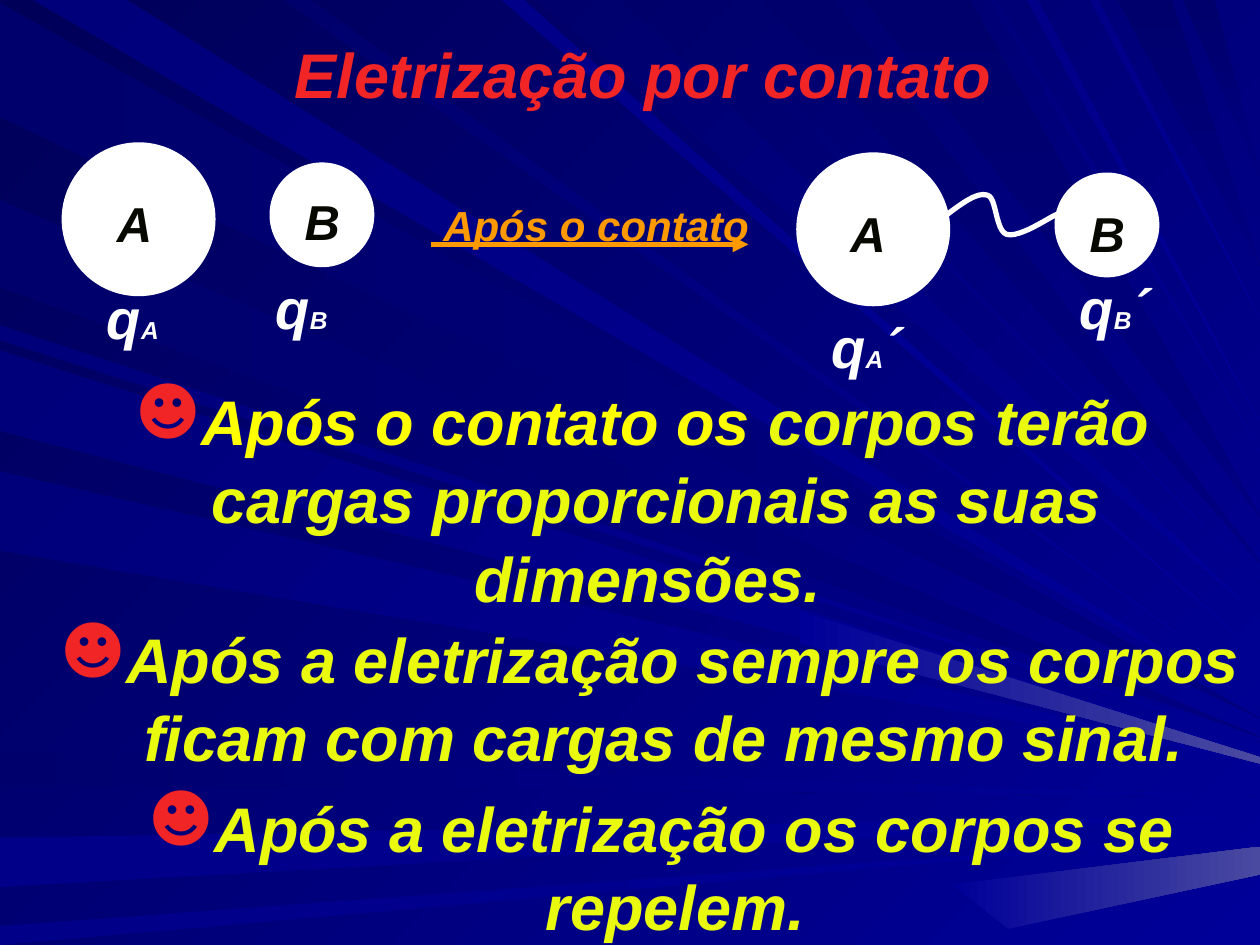
from pptx import Presentation
from pptx import util as u
from pptx.dml.color import RGBColor
from pptx.enum import shapes, text
from pptx.oxml import ns
from lxml import etree

COLOURS = {
    "red": "F12525", "lime": "E9FA0E", "yellow": "FFFF00", "orange": "FF9900",
    "white": "FFFFFF", "ink": "070800", "night": "000058", "deep": "00006D",
    "middle": "00007B", "navy": "000080", "soft": "000088", "royal": "000099",
    "haze": "4A4AA1",
}
RGB = {name: RGBColor.from_string(code) for name, code in COLOURS.items()}
STEP = 2.54  # centimetres per layout step
WIDTH, HEIGHT = 10, 7.5  # slide size in steps


def place(*values):
    return [u.Cm(value * STEP) for value in values]


def add_text(box, runs, size, colour, bullet=False):
    """Text box at box; runs are (words, size or None, colour or None)."""
    frame = slide.shapes.add_textbox(*place(*box)).text_frame
    frame.word_wrap = True
    frame.auto_size = text.MSO_AUTO_SIZE.SHAPE_TO_FIT_TEXT
    paragraph = frame.paragraphs[0]
    paragraph.line_spacing = 1.04
    if bullet:
        paragraph.alignment = text.PP_ALIGN.CENTER
        properties = paragraph._p.get_or_add_pPr()
        indent = u.Cm(0.56)
        properties.set("marL", str(indent))
        properties.set("indent", str(-indent))
        bullet_colour = etree.SubElement(properties, ns.qn("a:buClr"))
        etree.SubElement(bullet_colour, ns.qn("a:srgbClr"), val=COLOURS["red"])
        etree.SubElement(properties, ns.qn("a:buChar"), char="☻")
    for words, run_size, run_colour in runs:
        run = paragraph.add_run()
        run.text = words
        run.font.name = "Arial"
        run.font.size = u.Pt(run_size or size)
        run.font.bold = run.font.italic = True
        run.font.color.rgb = RGB[run_colour or colour]


presentation = Presentation()
presentation.slide_width, presentation.slide_height = place(WIDTH, HEIGHT)
slide = presentation.slides.add_slide(presentation.slide_layouts[6])

# Light rays: each starts between two marks on an edge and narrows to a
# height on the right edge
left_rays = [
    ("deep", "navy", 0, .02, .93, 5.7), ("deep", "royal", 0, 5.96, 6.23, 6.32),
    ("soft", "royal", 0, 6.65, 7.04, 6.47), ("soft", "royal", 0, 7.35, 7.5, 6.62),
    ("middle", "royal", 45, 2.58, 2.7, 5.89), ("deep", "navy", 0, 1.59, 2.28, 5.85),
    ("middle", "royal", 45, 2.78, 3.42, 6), ("middle", "royal", 45, 3.74, 4.37, 6.05),
]
top_rays = [
    ("middle", "royal", 45, .26, 1.01, 5.63), ("deep", "royal", 45, 2.25, 2.47, 5.5),
    ("soft", "royal", 45, 3.98, 4.16, 5.2), ("deep", "royal", 45, 4.26, 4.92, 4.9),
    ("deep", "royal", 45, 5.4, 5.52, 4.63), ("deep", "navy", 90, 6.06, 6.61, 4.46),
    ("deep", "navy", 90, 6.86, 7.7, 4.1), ("middle", "royal", 45, 7.85, 7.92, 3.57),
    ("soft", "royal", 45, 8.15, 8.24, 3.36), ("soft", "royal", 45, 8.65, 8.72, 2.53),
    ("deep", "navy", 90, 8.87, 9.3, 2.1), ("deep", "navy", 90, 9.39, 9.64, 1.4),
]
rays = [(start, end, angle, [(0, a), (0, b), (WIDTH, tip)])
        for start, end, angle, a, b, tip in left_rays]
rays += [(start, end, angle, [(a, 0), (b, 0), (WIDTH, tip)])
         for start, end, angle, a, b, tip in top_rays]
rays += [
    ("royal", "haze", 0, [(6.35, 4.85), (6.35, 5.11), (WIDTH, 6.06), (WIDTH, 6.01)]),
    ("royal", "haze", 0, [(7.56, 7.02), (8, 7.37), (WIDTH, 6.94), (WIDTH, 6.72)]),
]

# Background and rays; gradient angles here run clockwise
fills = [(slide.background.fill, "night", "royal", 45)]
for start, end, angle, corners in rays:
    builder = slide.shapes.build_freeform(*place(*corners[0]))
    builder.add_line_segments([place(*corner) for corner in corners[1:]])
    ray = builder.convert_to_shape()
    ray.shadow.inherit = False
    ray.line.fill.background()
    fills.append((ray.fill, start, end, angle))
for fill, start, end, angle in fills:
    fill.gradient()
    fill.gradient_angle = (360 - angle) % 360
    for stop, colour in zip(fill.gradient_stops, (start, end)):
        stop.color.rgb = RGB[colour]

# Title and statements
add_text((2.24, .21, 5.75, .7), [("Eletrização por contato", None, None)], 36, "red")
statements = [
    ((.2, 2.96, 9.8, 1.9), [("Após o contato os", None, "yellow"),
                            (" corpos terão cargas proporcionais as suas dimensões. ", None, None)]),
    ((.26, 4.85, 9.8, 1.3),
     [("Após a eletrização sempre os corpos ficam com cargas de mesmo sinal.", None, None)]),
    ((.27, 6.19, 9.96, 1.3), [("Após a eletrização os corpos se repelem.", None, None)]),
]
for box, runs in statements:
    add_text(box, runs, 36, "lime", bullet=True)

# Charged spheres: place and diameter, place of the name, place of the charge
spheres = [
    ("A", "", (.51, 1.15), 1.18, (.83, 1.47), (.75, 2.18)),
    ("B", "", (2.16, 1.31), .79, (2.32, 1.45), (2.09, 2.1)),
    ("A", "´", (6.34, 1.23), 1.18, (6.65, 1.55), (6.5, 2.41)),
    ("B", "´", (8.39, 1.39), .79, (8.55, 1.55), (8.47, 2.1)),
]
for name, prime, corner, diameter, name_corner, charge_corner in spheres:
    sphere = slide.shapes.add_shape(shapes.MSO_SHAPE.OVAL, *place(*corner, diameter, diameter))
    sphere.shadow.inherit = False
    sphere.fill.solid()
    sphere.fill.fore_color.rgb = sphere.line.color.rgb = RGB["white"]
    sphere.line.width = u.Pt(3)
    add_text((*name_corner, .47, .57), [(name, None, None)], 28, "ink")
    runs = [("q", None, None), (name, 14, None), (prime, None, None)]
    add_text((*charge_corner, .94, .63), [run for run in runs if run[0]], 32, "white")

# Wire between the touching spheres: Bezier curves sharing their end points
wire_controls = [(7.52, 1.7), (7.64, 1.61), (7.76, 1.52), (7.84, 1.55), (7.91, 1.57),
                 (7.9, 1.83), (7.99, 1.86), (8.09, 1.89), (8.32, 1.73), (8.39, 1.7)]
wire_points = []
for first in range(0, len(wire_controls) - 1, 3):
    curve = wire_controls[first:first + 4]
    for t in [part / 12 for part in range(1, 13)]:
        weights = ((1 - t) ** 3, 3 * t * (1 - t) ** 2, 3 * t ** 2 * (1 - t), t ** 3)
        wire_points.append(place(*[sum(w * value for w, value in zip(weights, values))
                                   for values in zip(*curve)]))
builder = slide.shapes.build_freeform(*place(*wire_controls[0]))
builder.add_line_segments(wire_points, close=False)
wire = builder.convert_to_shape()
wire.shadow.inherit = False
wire.fill.background()
wire.line.color.rgb = RGB["white"]
wire.line.width = u.Pt(3)

# Arrow from before to after
arrow = slide.shapes.add_connector(shapes.MSO_CONNECTOR.STRAIGHT, *place(3.42, 1.94, 5.94, 1.94))
arrow.line.color.rgb = RGB["orange"]
arrow.line.width = u.Pt(3)
etree.SubElement(arrow.line._get_or_add_ln(), ns.qn("a:tailEnd"), type="triangle")
etree.SubElement(arrow._element.spPr, ns.qn("a:effectLst"))
add_text((3.42, 1.52, 2.84, .5), [("Após o contato", None, None)], 24, "orange")

presentation.save("out.pptx")
